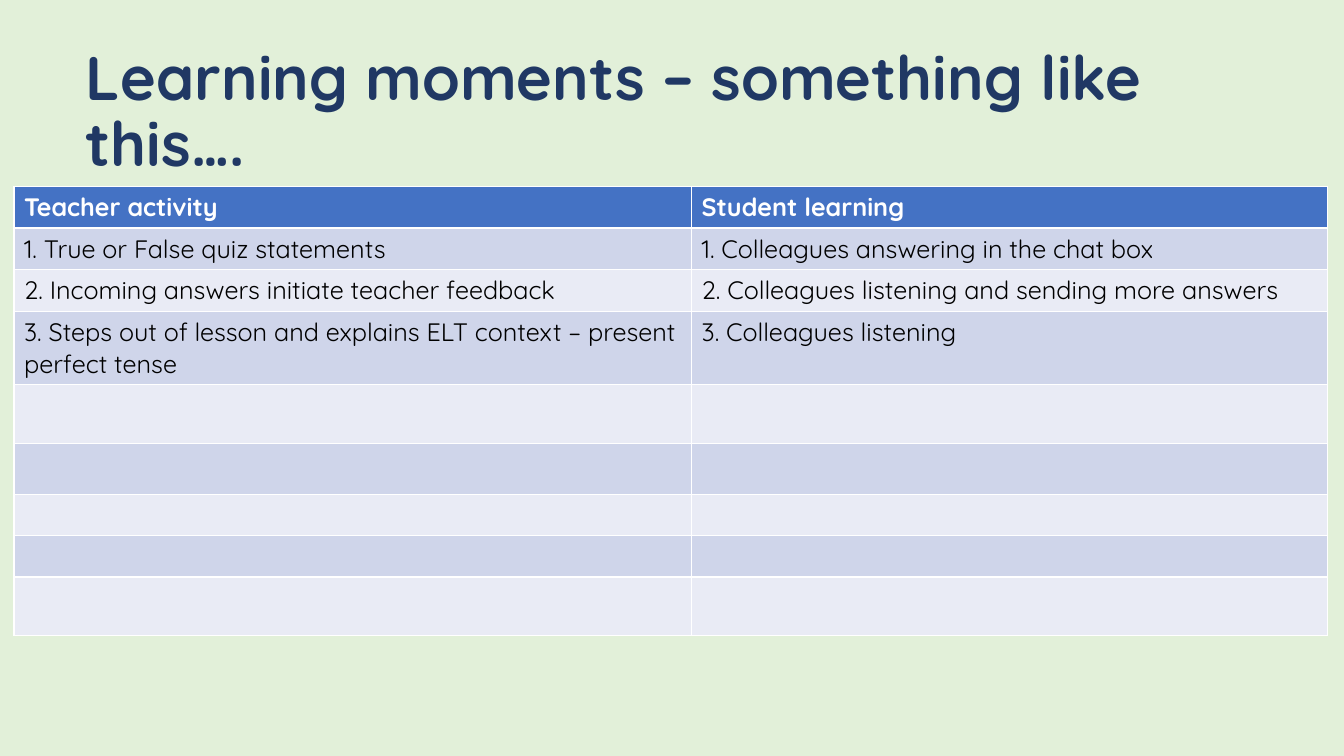
"""Build the slide on learning moments for teacher and students."""
from dataclasses import dataclass

from pptx import Presentation
from pptx.dml.color import RGBColor as RGB
from pptx.enum.text import MSO_ANCHOR as Anchor, MSO_AUTO_SIZE as AutoSize, PP_ALIGN as Align
from pptx.util import Pt

COLOURS = {
    "background": "E2F0D9", "title": "203864", "header": "4472C4",
    "odd": "CFD5EA", "even": "E9EBF5", "white": "FFFFFF", "black": "000000",
}
TITLE_FONT = {"name": "Quicksand", "size": Pt(44), "bold": True}
HEADER_FONT = {"name": "Quicksand", "size": Pt(18), "bold": True}
BODY_FONT = HEADER_FONT | {"bold": False}
COLUMN_WIDTHS = (484, 454)


@dataclass
class Moment:
    """One table row: what the teacher does and what students learn."""
    height: float
    teacher: str = ""
    student: str = ""


MOMENTS = [
    Moment(16.5, "Teacher activity", "Student learning"),
    Moment(25, "1. True or False quiz statements",
           "1. Colleagues answering in the chat box"),
    Moment(29.5, "2. Incoming answers initiate teacher feedback",
           "2. Colleagues listening and sending more answers"),
    Moment(29.5, "3. Steps out of lesson and explains ELT context – present perfect tense",
           "3. Colleagues listening"),
    *[Moment(height) for height in (42, 36.5, 29.5, 29.5, 42)],
]


def colour(name: str) -> RGB:
    """Look up a named colour."""
    return RGB.from_string(COLOURS[name])


def write(p, text: str, font: dict, ink: str) -> None:
    """Add a formatted run to a paragraph."""
    r = p.add_run()
    r.text = text
    for key, value in font.items():
        setattr(r.font, key, value)
    r.font.color.rgb = colour(ink)


def add_title(s, text: str) -> None:
    """Place and format the title placeholder."""
    sp = s.shapes.title
    box = {"left": 54, "top": 29, "width": 840, "height": 104.5}
    for key, value in box.items():
        setattr(sp, key, Pt(value))
    tf = sp.text_frame
    tf.auto_size = AutoSize.NONE
    tf.vertical_anchor = Anchor.MIDDLE
    p = tf.paragraphs[0]
    p.alignment = Align.LEFT
    p.line_spacing = 0.9
    write(p, text, TITLE_FONT, "title")


def add_moments(s, moments: list[Moment]) -> None:
    """Draw the table with a header and banded rows."""
    frame = s.shapes.add_table(len(moments), len(COLUMN_WIDTHS), Pt(10), Pt(133),
                               Pt(sum(COLUMN_WIDTHS)), Pt(316))
    table = frame.table
    for column, width in zip(table.columns, COLUMN_WIDTHS):
        column.width = Pt(width)
    for i, (row, moment) in enumerate(zip(table.rows, moments)):
        row.height = Pt(moment.height)
        band = "odd" if i % 2 else "even"
        fill, font, ink = (band, BODY_FONT, "black") if i else ("header", HEADER_FONT, "white")
        for cell, text in zip(row.cells, (moment.teacher, moment.student)):
            cell.fill.solid()
            cell.fill.fore_color.rgb = colour(fill)
            if text:
                write(cell.text_frame.paragraphs[0], text, font, ink)
    frame.height = Pt(316)


def main() -> None:
    """Create and save the presentation."""
    prs = Presentation()
    prs.slide_width, prs.slide_height = Pt(960), Pt(540)
    s = prs.slides.add_slide(prs.slide_layouts.get_by_name("Title Only"))
    s.background.fill.solid()
    s.background.fill.fore_color.rgb = colour("background")
    add_title(s, "Learning moments – something like this….")
    add_moments(s, MOMENTS)
    prs.save("out.pptx")


if __name__ == "__main__":
    main()
